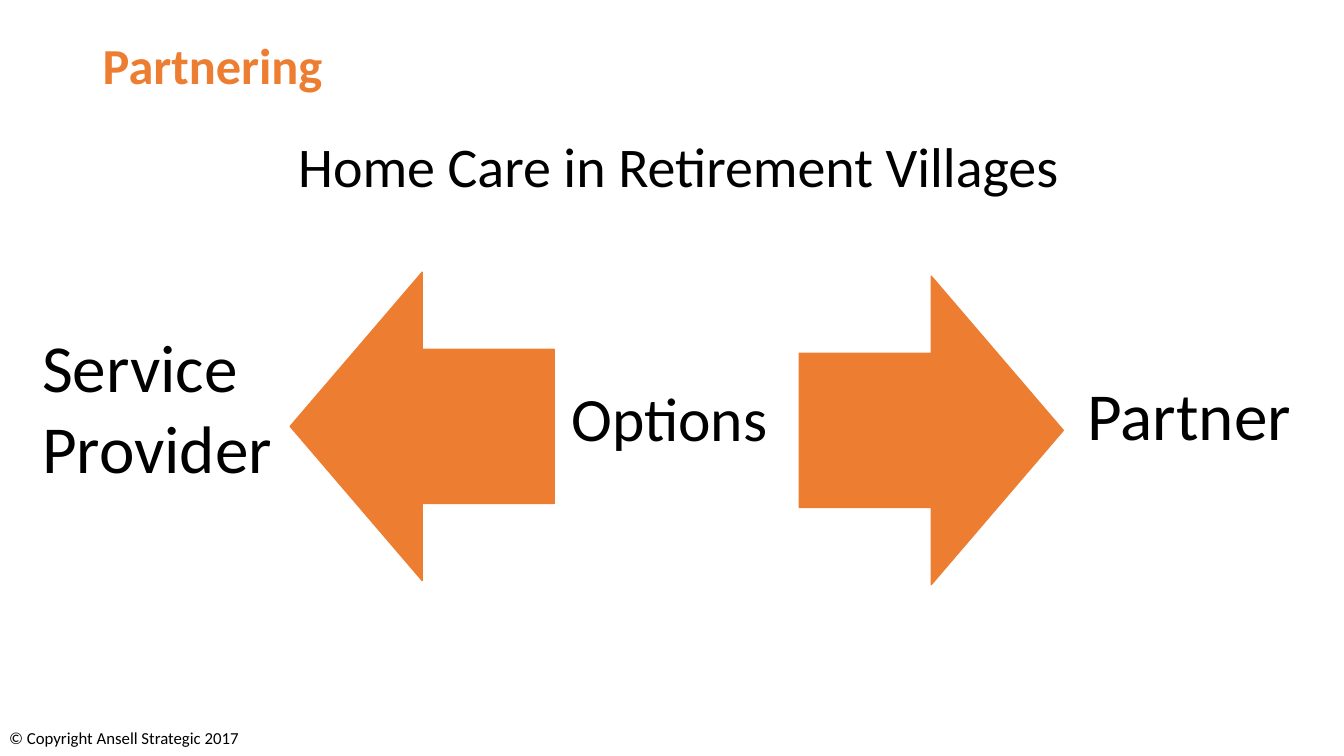
import pptx
import pptx.dml.color
import pptx.enum.shapes
import pptx.enum.text
import pptx.util

Pt = pptx.util.Pt
RGBColor = pptx.dml.color.RGBColor
Align = pptx.enum.text.PP_ALIGN
Anchor = pptx.enum.text.MSO_ANCHOR
AutoSize = pptx.enum.text.MSO_AUTO_SIZE

ORANGE = RGBColor(0xED, 0x7D, 0x31)
BLACK = RGBColor(0x00, 0x00, 0x00)
FONT_NAME = "Calibri"


def place(shape, box):
    for name, value in zip(("left", "top", "width", "height"), box):
        setattr(shape, name, Pt(value))


def write_text(shape, text, size, color=BLACK, bold=False, align=Align.LEFT,
               anchor=Anchor.TOP, auto_size=AutoSize.SHAPE_TO_FIT_TEXT, line_spacing=1.0):
    frame = shape.text_frame
    frame.text = text
    frame_format = {"word_wrap": True, "auto_size": auto_size, "vertical_anchor": anchor}
    for name, value in frame_format.items():
        setattr(frame, name, value)
    paragraph = frame.paragraphs[0]
    paragraph.alignment = align
    paragraph.line_spacing = line_spacing
    font = paragraph.runs[0].font
    for name, value in {"name": FONT_NAME, "size": Pt(size), "bold": bold}.items():
        setattr(font, name, value)
    font.color.rgb = color


def add_title(slide, box, text):
    title = slide.shapes.title
    place(title, box)
    write_text(title, text, 36, ORANGE, bold=True, anchor=Anchor.MIDDLE,
               auto_size=AutoSize.NONE, line_spacing=0.9)


def add_label(slide, box, text, size, **text_format):
    label = slide.shapes.add_textbox(*map(Pt, box))
    write_text(label, text, size, **text_format)


def add_arrow(slide, box, rotation):
    arrow = slide.shapes.add_shape(
        pptx.enum.shapes.MSO_SHAPE.RIGHT_ARROW, *map(Pt, box))
    arrow.rotation = rotation
    arrow.shadow.inherit = False
    arrow.fill.solid()
    arrow.fill.fore_color.rgb = ORANGE
    arrow.line.color.rgb = ORANGE
    arrow.line.width = Pt(1)


def add_options_diagram(slide, box):
    """Place two outward arrows around the central label, with an outcome at each end."""
    left, top, width, height = box
    arrow_width, arrow_height = 188.6, 220.3
    provider_width, partner_width = 182.9, 164.9
    add_arrow(slide, (left + 184.3, top, arrow_width, arrow_height), 180)
    add_arrow(slide, (left + 547.9, top + height - arrow_height, arrow_width, arrow_height), 0)
    add_label(slide, (left, top + 34.6, provider_width, 123.8), "Service Provider", 48)
    add_label(slide, (left + 378, top + 73.4, 164.2, 60.5), "Options", 44)
    add_label(slide, (left + width - partner_width, top + 68.4, partner_width, 65.5),
              "Partner", 48)


def add_copyright(slide, box):
    add_label(slide, box, "© Copyright Ansell Strategic 2017", 12, align=Align.CENTER,
              anchor=Anchor.MIDDLE, auto_size=AutoSize.NONE)


def main():
    presentation = pptx.Presentation()
    presentation.slide_width = Pt(960)
    presentation.slide_height = Pt(540)
    slide = presentation.slides.add_slide(presentation.slide_layouts[5])
    add_title(slide, (66.2, 28.8, 828, 40.3), "Partnering")
    add_label(slide, (205.9, 90.7, 670.3, 55.4), "Home Care in Retirement Villages", 40)
    add_options_diagram(slide, (23, 194.4, 911.6, 223.2))
    add_copyright(slide, (-19.4, 512.6, 216, 28.8))
    presentation.save("out.pptx")


if __name__ == "__main__":
    main()
